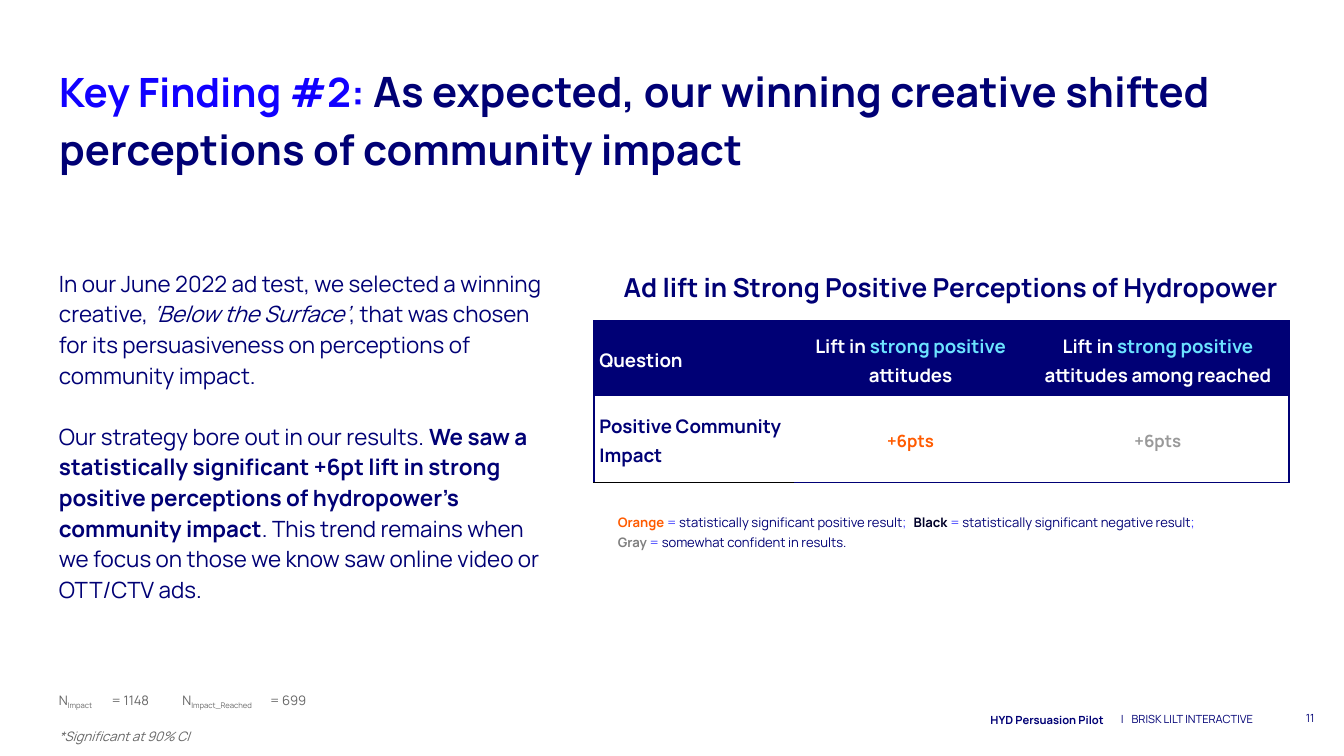
from dataclasses import dataclass

from lxml.etree import SubElement
from pptx import Presentation
from pptx.dml.color import RGBColor
from pptx.enum.text import MSO_ANCHOR as Anchor, MSO_AUTO_SIZE as AutoSize, PP_ALIGN as Align
from pptx.oxml.ns import qn
from pptx.util import Inches, Pt


@dataclass(frozen=True)
class Theme:
    font: str = "Manrope"
    navy: str = "000075"
    blue: str = "1100FF"
    link: str = "3A3AFE"
    cyan: str = "6CE3FF"
    orange: str = "FF5B00"
    ink: str = "000028"
    black: str = "000000"
    white: str = "FFFFFF"
    gray: str = "7F7F7F"
    pale: str = "999999"
    note: str = "666666"
    title: float = 22.4
    lead: float = 21.6
    heading: float = 14
    body: float = 12
    table: float = 10
    result: float = 9
    small: float = 7
    footer: float = 6


THEME = Theme()

TITLE = [[("Key Finding #2: ", dict(color=THEME.blue, size=THEME.lead)),
          "As expected, our winning creative shifted perceptions of community impact"]]
BODY = [
    ["In our June 2022 ad test, we selected a winning creative, ",
     ("‘Below the Surface’", dict(italic=True)),
     ", that was chosen for its persuasiveness on perceptions of community impact."],
    ["Our strategy bore out in our results. ",
     ("We saw a statistically significant +6pt lift in strong positive perceptions "
      "of hydropower’s community impact", dict(bold=True)),
     ". This trend remains when we focus on those we know saw online video or OTT/CTV ads."],
]
HEADING = [["Ad lift in Strong Positive Perceptions of Hydropower"]]
EQUALS = (" = ", dict(color=THEME.link))
LEGEND = [
    [("Orange", dict(color=THEME.orange, bold=True)), EQUALS,
     "statistically significant positive result", (";\t", dict(color=THEME.link)),
     ("Black", dict(color=THEME.ink, bold=True)), EQUALS,
     "statistically significant negative result", (";", dict(color=THEME.link))],
    [("Gray", dict(color=THEME.gray, bold=True)), EQUALS, "somewhat confident in results."],
]
SUBSCRIPT = dict(baseline=-25)
SAMPLE = [["N", ("Impact", SUBSCRIPT), "\t= 1148"],
          [("*Significant at 90% CI", dict(italic=True))]]
SAMPLE_REACHED = [["N", ("Impact_Reached", SUBSCRIPT), "\t= 699"]]

CYAN = dict(color=THEME.cyan)
ROWS = [
    [[["Question"]],
     [["Lift in ", ("strong positive", CYAN)], ["attitudes"]],
     [["Lift in ", ("strong positive ", CYAN), "attitudes among reached"]]],
    [[["Positive Community Impact"]],
     [[("+6pts", dict(color=THEME.orange, size=THEME.result))]],
     [[("+6pts", dict(color=THEME.pale, size=THEME.result))]]],
]
COLUMN_WIDTHS = [1.49, 1.73, 1.95]
ROW_HEIGHTS = [0.56, 0.64]

SMALL = dict(size=THEME.small, color=THEME.note)
FOOTER = dict(size=THEME.footer)
TEXT_BOXES = [
    ((7.15, 5.26, 2.45, 0.18), [["\t|\tBRISK LILT INTERACTIVE"]],
     dict(FOOTER, tabs=[1.12, 1.2], margins=(0.07, 0.04))),
    ((9.28, 5.13, 0.6, 0.43), [["11"]], dict(FOOTER, align=Align.RIGHT, anchor=Anchor.MIDDLE)),
    ((1.22, 5.26, 7.09, 0.18), [["HYD Persuasion Pilot"]],
     dict(FOOTER, bold=True, align=Align.RIGHT, anchor=Anchor.MIDDLE, spacing=1.15)),
    ((0.34, 1.88, 3.8, 2.71), BODY, dict(size=THEME.body, spacing=1.14, gap=16.4)),
    ((4.5, 3.75, 4.83, 0.37), LEGEND,
     dict(size=THEME.small, spacing=1.25, tabs=[2.2], margins=(0.1, 0.05))),
    ((4.42, 1.97, 5.31, 0.34), HEADING,
     dict(size=THEME.heading, bold=True, align=Align.CENTER, margins=(0.1, 0.05))),
    ((0.34, 5.05, 1.51, 0.58), SAMPLE, dict(SMALL, gap=10, tabs=[0.39])),
    ((1.26, 5.05, 1.56, 0.44), SAMPLE_REACHED, dict(SMALL, tabs=[0.65])),
]


def write_text(frame, paragraphs, size, color=THEME.navy, bold=False, align=Align.LEFT,
               spacing=None, gap=0, tabs=()):
    for index, parts in enumerate(paragraphs):
        paragraph = frame.add_paragraph() if index else frame.paragraphs[0]
        if tabs:
            tab_list = SubElement(paragraph._p.get_or_add_pPr(), qn("a:tabLst"))
            for position in tabs:
                SubElement(tab_list, qn("a:tab"), pos=str(Inches(position)), algn="l")
        paragraph.alignment = align
        if spacing:
            paragraph.line_spacing = spacing
        if index and gap:
            paragraph.space_before = Pt(gap)
        for part in parts:
            text, style = (part, {}) if isinstance(part, str) else part
            run = paragraph.add_run()
            run.text = text
            run.font.name = THEME.font
            run.font.size = Pt(style.get("size", size))
            run.font.bold = style.get("bold", bold)
            run.font.italic = style.get("italic", False)
            run.font.color.rgb = RGBColor.from_string(style.get("color", color))
            if "baseline" in style:
                run._r.get_or_add_rPr().set("baseline", str(style["baseline"] * 1000))


def fill_box(shape, place, paragraphs, margins=(0.1, 0.1), anchor=Anchor.TOP, **style):
    shape.left, shape.top, shape.width, shape.height = map(Inches, place)
    frame = shape.text_frame
    frame.word_wrap = True
    frame.auto_size = AutoSize.NONE
    frame.vertical_anchor = anchor
    frame.margin_left = frame.margin_right = Inches(margins[0])
    frame.margin_top = frame.margin_bottom = Inches(margins[1])
    write_text(frame, paragraphs, **style)


def set_borders(cell, borders):
    properties = cell._tc.get_or_add_tcPr()
    for index, side in enumerate("LRTB"):
        line = properties.makeelement(qn(f"a:ln{side}"), {})
        properties.insert(index, line)
        if side in borders:
            color, width = borders[side]
            line.set("w", str(Pt(width)))
            fill = SubElement(line, qn("a:solidFill"))
            SubElement(fill, qn("a:srgbClr"), val=color)
        else:
            SubElement(line, qn("a:noFill"))


def add_results_table(slide):
    place = map(Inches, (4.42, 2.39, sum(COLUMN_WIDTHS), sum(ROW_HEIGHTS)))
    table = slide.shapes.add_table(len(ROWS), len(COLUMN_WIDTHS), *place).table
    table.first_row = table.horz_banding = False
    for column, width in zip(table.columns, COLUMN_WIDTHS):
        column.width = Inches(width)
    for row, height in zip(table.rows, ROW_HEIGHTS):
        row.height = Inches(height)
    last_column = len(COLUMN_WIDTHS) - 1
    for row_index, row in enumerate(ROWS):
        header = row_index == 0
        for column_index, paragraphs in enumerate(row):
            first = column_index == 0
            cell = table.cell(row_index, column_index)
            cell.vertical_anchor = Anchor.MIDDLE
            cell.margin_left = cell.margin_right = Inches(0.04)
            cell.margin_top = cell.margin_bottom = Inches(0.02)
            if header:
                cell.fill.solid()
                cell.fill.fore_color.rgb = RGBColor.from_string(THEME.navy)
            else:
                cell.fill.background()
            borders = {"T": (THEME.navy, 1)} if header else {
                "B": (THEME.black if first else THEME.navy, 0.75)}
            if first:
                borders["L"] = (THEME.navy, 1)
            if column_index == last_column:
                borders["R"] = (THEME.navy, 1)
            set_borders(cell, borders)
            write_text(cell.text_frame, paragraphs, size=THEME.table, bold=True, spacing=1.15,
                       color=THEME.white if header else THEME.navy,
                       align=Align.LEFT if first else Align.CENTER)


def main():
    presentation = Presentation()
    presentation.slide_width = Inches(10)
    presentation.slide_height = presentation.slide_width * 9 // 16
    slide = presentation.slides.add_slide(presentation.slide_layouts[5])
    fill_box(slide.shapes.title, (0.34, 0.34, 9.07, 0.56), TITLE,
             size=THEME.title, bold=True, spacing=1.14)
    for place, paragraphs, style in TEXT_BOXES:
        box = slide.shapes.add_textbox(*map(Inches, place))
        fill_box(box, place, paragraphs, **style)
    add_results_table(slide)
    presentation.save("out.pptx")


if __name__ == "__main__":
    main()
